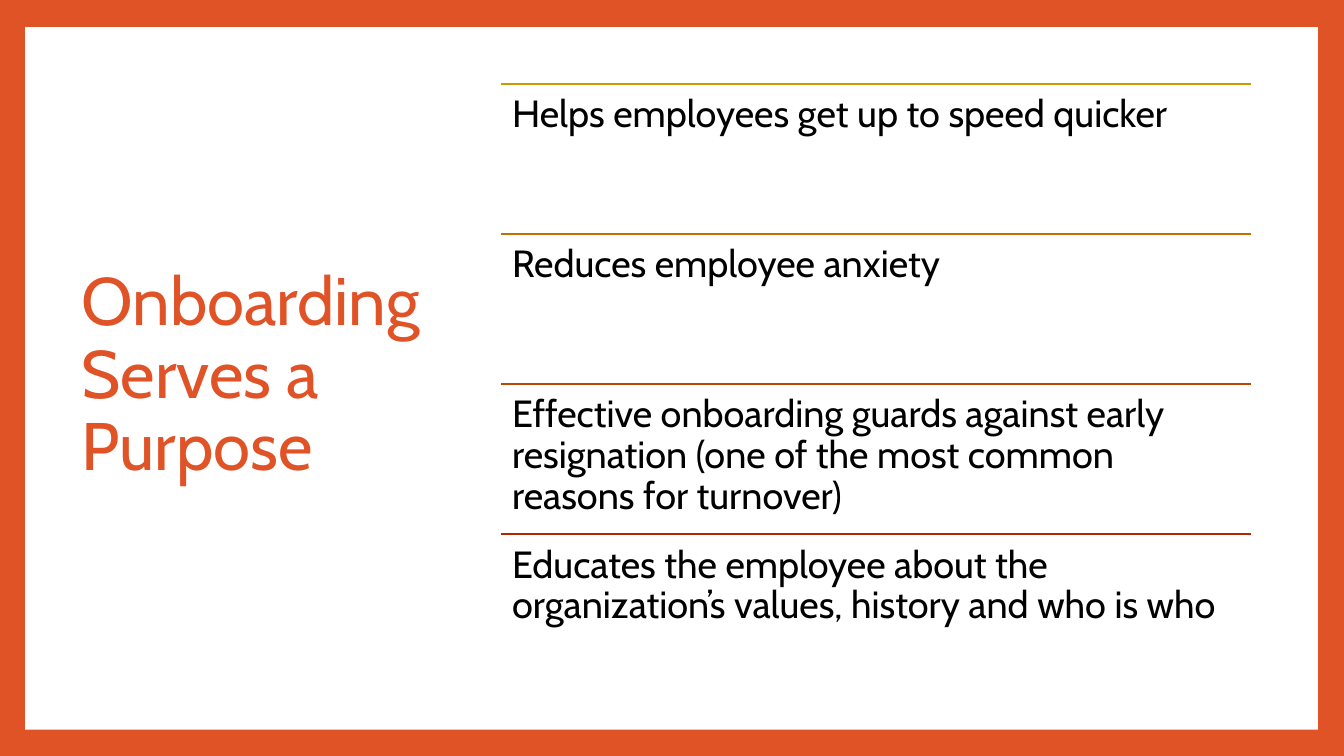
"""Builds a framed slide listing the purposes of onboarding."""
from lxml import etree
from pptx import Presentation
from pptx import util as u
from pptx.dml.color import RGBColor
from pptx.enum import shapes, text
from pptx.oxml import ns

ORANGE = RGBColor(0xDF, 0x53, 0x27)
WHITE = RGBColor(0xFF, 0xFF, 0xFF)
BLACK = RGBColor(0, 0, 0)
FONT = "Cabin"
LIST_LEFT, LIST_TOP = u.Inches(4.97), u.Inches(0.83)
LIST_WIDTH, ROW_HEIGHT = u.Inches(7.44), u.Inches(1.49)
PURPOSES = [
    ("Helps employees get up to speed quicker", RGBColor(0xCC, 0x99, 0x00)),
    ("Reduces employee anxiety", RGBColor(0xC3, 0x70, 0x00)),
    ("Effective onboarding guards against early resignation "
     "(one of the most common reasons for turnover)", RGBColor(0xBB, 0x49, 0x00)),
    ("Educates the employee about the organization’s values, "
     "history and who is who", RGBColor(0xB2, 0x26, 0x00)),
]


def add_frame(slide):
    """Leave an orange border around a white panel."""
    slide.background.fill.solid()
    slide.background.fill.fore_color.rgb = ORANGE
    panel = slide.shapes.add_shape(
        shapes.MSO_SHAPE.RECTANGLE,
        u.Inches(0.25), u.Inches(0.27), u.Inches(12.82), u.Inches(6.97))
    panel.shadow.inherit = False
    panel.fill.solid()
    panel.fill.fore_color.rgb = WHITE
    panel.line.fill.background()


def add_words(slide, box, words, size, color, anchor, inset):
    """Add one wrapped paragraph and return its text frame."""
    frame = slide.shapes.add_textbox(*box).text_frame
    frame.word_wrap = True
    frame.vertical_anchor = anchor
    frame.margin_left = frame.margin_right = u.Inches(inset)
    frame.margin_top = frame.margin_bottom = u.Inches(inset)
    frame.text = words
    paragraph = frame.paragraphs[0]
    paragraph.line_spacing = 0.9
    font = paragraph.runs[0].font
    font.name, font.size = FONT, u.Pt(size)
    font.color.rgb = color


def add_rule(slide, top, color):
    """Draw a thin rule across the list column."""
    rule = slide.shapes.add_connector(
        shapes.MSO_CONNECTOR.STRAIGHT, LIST_LEFT, top, LIST_LEFT + LIST_WIDTH, top)
    rule.line.color.rgb = color
    rule.line.width = u.Pt(1.5)
    etree.SubElement(rule._element.spPr, ns.qn("a:effectLst"))


def main():
    """Build and save the slide."""
    deck = Presentation()
    deck.slide_width, deck.slide_height = u.Inches(13.33), u.Inches(7.5)
    slide = deck.slides.add_slide(deck.slide_layouts[6])
    add_frame(slide)
    title_box = u.Inches(0.71), u.Inches(0.67), u.Inches(3.68), u.Inches(6.13)
    add_words(slide, title_box, "Onboarding Serves a Purpose", 48, ORANGE,
              text.MSO_ANCHOR.MIDDLE, 0.1)
    for row, (purpose, color) in enumerate(PURPOSES):
        top = LIST_TOP + row * ROW_HEIGHT
        add_rule(slide, top, color)
        add_words(slide, (LIST_LEFT, top, LIST_WIDTH, ROW_HEIGHT), purpose, 27,
                  BLACK, text.MSO_ANCHOR.TOP, 0.11)
    deck.save("out.pptx")


if __name__ == "__main__":
    main()
